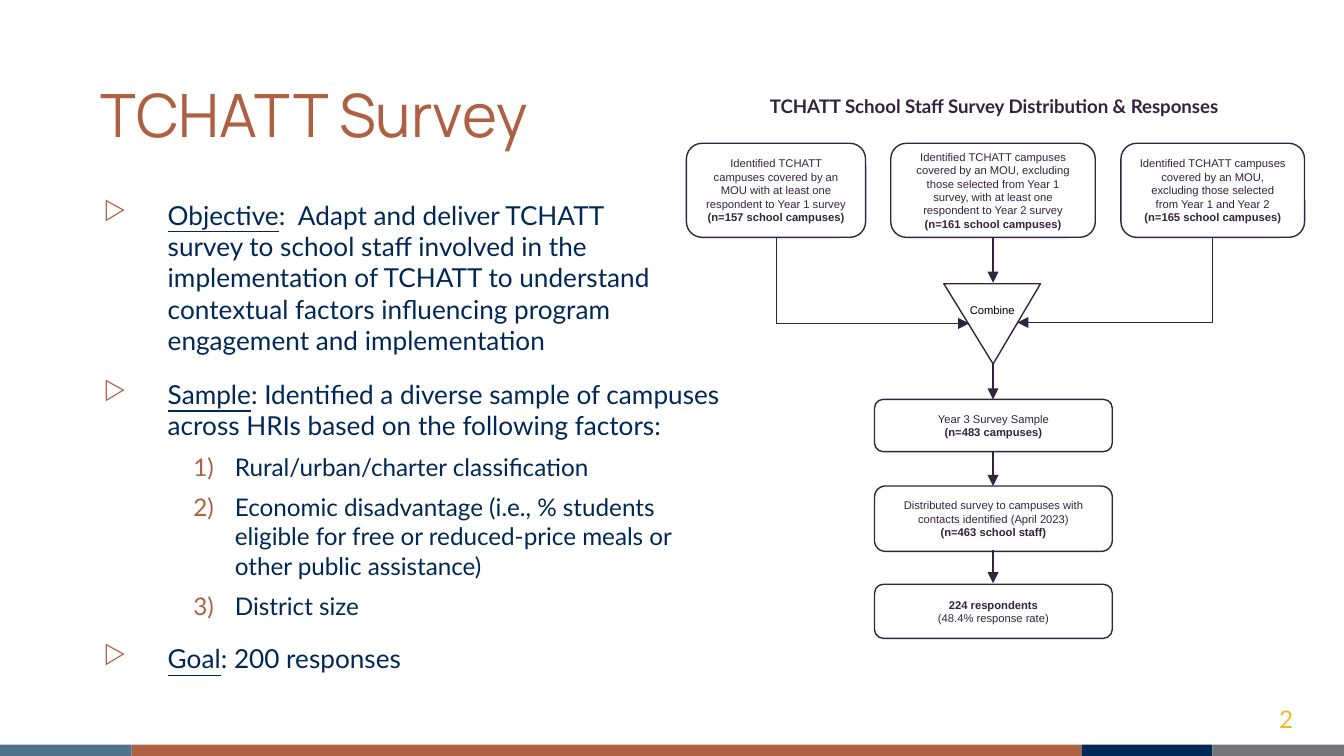
import pptx
import pptx.dml.color
import pptx.enum.shapes
import pptx.enum.text
import pptx.oxml.ns
import pptx.util
from dataclasses import dataclass
from lxml import etree

Pt = pptx.util.Pt
SHAPE = pptx.enum.shapes.MSO_SHAPE
CONNECTOR = pptx.enum.shapes.MSO_CONNECTOR
ALIGN = pptx.enum.text.PP_ALIGN
ANCHOR = pptx.enum.text.MSO_ANCHOR
RGB = pptx.dml.color.RGBColor.from_string
qn = pptx.oxml.ns.qn


@dataclass(frozen=True)
class Theme:
    rust: str = "AE6042"
    navy: str = "002856"
    steel: str = "4E738A"
    gray: str = "757578"
    gold: str = "F2B826"
    ink: str = "31243E"
    white: str = "FFFFFF"
    black: str = "000000"
    title: float = 32
    body: float = 14
    item: float = 13
    heading: float = 10
    chart: float = 6
    line: float = 0.75


theme = Theme()


def write(para, spans, size, color, font, align=None):
    """Fill a paragraph with (text, style) spans; style is "", "bold" or "underline"."""
    para.alignment = align
    for text, style in spans:
        span = para.add_run()
        span.text = text
        span.font.size = Pt(size)
        span.font.name = font
        span.font.color.rgb = RGB(color)
        span.font.bold = style == "bold"
        span.font.underline = style == "underline"


def add_arrow(kind, left, top, right, bottom):
    arrow = page.shapes.add_connector(kind, Pt(left), Pt(top), Pt(right), Pt(bottom))
    arrow.line.color.rgb = RGB(theme.ink)
    arrow.line.width = Pt(theme.line)
    etree.SubElement(arrow.line._get_or_add_ln(), qn("a:tailEnd"), type="triangle")
    etree.SubElement(arrow._element.spPr, qn("a:effectLst"))
    return arrow


deck = pptx.Presentation()
deck.slide_width, deck.slide_height = Pt(720), Pt(405)
page = deck.slides.add_slide(deck.slide_layouts[6])

# Footer band
left = 0
for width, color in [(70.5, theme.steel), (509, theme.rust),
                     (70, theme.navy), (70.5, theme.gray)]:
    band = page.shapes.add_shape(SHAPE.RECTANGLE, Pt(left), Pt(399), Pt(width), Pt(6))
    band.shadow.inherit = False
    band.fill.solid()
    band.fill.fore_color.rgb = RGB(color)
    band.line.fill.background()
    left += width

# Title, page number, chart heading and triangle label
labels = [
    ("TCHATT Survey", 46.8, 41, 278, 46.8, 7.2, ANCHOR.BOTTOM,
     theme.title, theme.rust, "Manrope", "", ALIGN.LEFT),
    ("2", 667.5, 370, 43, 24.5, 7.2, ANCHOR.TOP,
     theme.item, theme.gold, "Lato", "", ALIGN.CENTER),
    ("TCHATT School Staff Survey Distribution & Responses", 402.5, 47.5, 260, 19.4, 3.6,
     ANCHOR.TOP, theme.heading, theme.ink, "Lato", "bold", ALIGN.CENTER),
]
triangle_label = ("Combine", 507.8, 159, 47.5, 14.4, 3.6, ANCHOR.TOP,
                  theme.chart, theme.black, "Arial", "", ALIGN.CENTER)

# Survey description
body = page.shapes.add_textbox(Pt(46.8), Pt(99.4), Pt(350.6), Pt(288))
body.text_frame.word_wrap = True
body.text_frame.margin_top = body.text_frame.margin_bottom = Pt(7.2)
outline = [
    ("point", 0, [("Objective", "underline"), (":  Adapt and deliver TCHATT", "")]),
    ("plain", 0, [("survey to school staff involved in the implementation of TCHATT to "
                   "understand contextual factors influencing program engagement and "
                   "implementation", "")]),
    ("point", 12, [("Sample", "underline"),
                   (": Identified a diverse sample of campuses across HRIs based on "
                    "the following factors:", "")]),
    ("number", 6, [("Rural/urban/charter classification", "")]),
    ("number", 6, [("Economic disadvantage (i.e., % students eligible for free or "
                    "reduced-price meals or other public assistance)", "")]),
    ("number", 6, [("District size", "")]),
    ("point", 12, [("Goal", "underline"), (": 200 responses", "")]),
]
indents = {"point": (36, -34.5), "plain": (36, 0), "number": (72, -22.3)}
for index, (kind, gap, spans) in enumerate(outline):
    para = body.text_frame.add_paragraph() if index else body.text_frame.paragraphs[0]
    numbered = kind == "number"
    write(para, spans, theme.item if numbered else theme.body, theme.navy, "Lato", ALIGN.LEFT)
    para.level = int(numbered)
    para.space_before = Pt(gap)
    margin, hanging = indents[kind]
    props = para._p.get_or_add_pPr()
    props.set("marL", str(Pt(margin)))
    props.set("indent", str(Pt(hanging)))
    if kind == "plain":
        etree.SubElement(props, qn("a:buNone"))
        continue
    bullet_color = etree.SubElement(props, qn("a:buClr"))
    etree.SubElement(bullet_color, qn("a:srgbClr"), val=theme.rust)
    if numbered:
        etree.SubElement(props, qn("a:buAutoNum"), type="arabicParenR")
    else:
        etree.SubElement(props, qn("a:buChar"), char="▷")

# Flow chart boxes
center = 532
boxes = [
    (367.7, 76.8, 96, 50.4, [
        ("Identified TCHATT campuses covered by an MOU with at least one respondent "
         "to Year 1 survey", ""), ("(n=157 school campuses)", "bold")]),
    (477.2, 76.8, 109.6, 50.4, [
        ("Identified TCHATT campuses covered by an MOU, excluding those selected from "
         "Year 1 survey, with at least one respondent to Year 2 survey", ""),
        ("(n=161 school campuses)", "bold")]),
    (600.5, 76.8, 98.4, 50.4, [
        ("Identified TCHATT campuses covered by an MOU, excluding those selected from "
         "Year 1 and Year 2", ""), ("(n=165 school campuses)", "bold")]),
    (468.5, 214, 127.4, 28, [
        ("Year 3 Survey Sample", ""), ("(n=483 campuses)", "bold")]),
    (468.5, 260.4, 127.4, 35, [
        ("Distributed survey to campuses with contacts identified (April 2023)", ""),
        ("(n=463 school staff)", "bold")]),
    (468.5, 313, 127.4, 29, [
        ("224 respondents", "bold"), ("(48.4% response rate)", "")]),
]
triangle = page.shapes.add_shape(SHAPE.ISOSCELES_TRIANGLE, Pt(505.6), Pt(152), Pt(51.8), Pt(43))
triangle.rotation = 180
triangle.adjustments[0] = 0.49
outlined = [triangle]
for left, top, width, height, lines in boxes:
    box = page.shapes.add_shape(SHAPE.ROUNDED_RECTANGLE,
                                Pt(left), Pt(top), Pt(width), Pt(height))
    outlined.append(box)
    box.text_frame.word_wrap = True
    box.text_frame.vertical_anchor = ANCHOR.MIDDLE
    for index, line in enumerate(lines):
        para = box.text_frame.add_paragraph() if index else box.text_frame.paragraphs[0]
        write(para, [line], theme.chart, theme.ink, "Arial", ALIGN.CENTER)
for shape in outlined:
    shape.shadow.inherit = False
    shape.fill.solid()
    shape.fill.fore_color.rgb = RGB(theme.white)
    shape.line.color.rgb = RGB(theme.ink)
    shape.line.width = Pt(theme.line)

# Text labels, the triangle's above its shape
for text, left, top, width, height, inset, anchor, size, color, font, style, align in (
        labels + [triangle_label]):
    label = page.shapes.add_textbox(Pt(left), Pt(top), Pt(width), Pt(height))
    frame = label.text_frame
    frame.word_wrap = True
    frame.margin_top = frame.margin_bottom = Pt(inset)
    frame.vertical_anchor = anchor
    write(frame.paragraphs[0], [(text, style)], size, color, font, align)
    if size == theme.title:
        frame.paragraphs[0].line_spacing = 0.9

# Straight arrows down the middle
for start, end in [(127, 151.5), (195, 214), (242, 260.4), (294.8, 312.5)]:
    add_arrow(CONNECTOR.STRAIGHT, center, start, center, end)

# Elbow arrows: down from the outer boxes, then in to the triangle
for start, end, bottom in [(649.7, 545, 172.8), (416, 519.2, 173.3)]:
    top = 127
    drop, run = bottom - top, abs(end - start)
    middle_x, middle_y = (start + end) / 2, (top + bottom) / 2
    elbow = add_arrow(CONNECTOR.ELBOW, middle_x - drop / 2, middle_y - run / 2,
                      middle_x + drop / 2, middle_y + run / 2)
    props = elbow._element.spPr
    props.find(qn("a:prstGeom")).set("prst", "bentConnector2")
    turn = props.find(qn("a:xfrm"))
    turn.set("rot", str((90 if end < start else 270) * 60000))
    if end > start:
        turn.set("flipH", "1")

deck.save("out.pptx")
